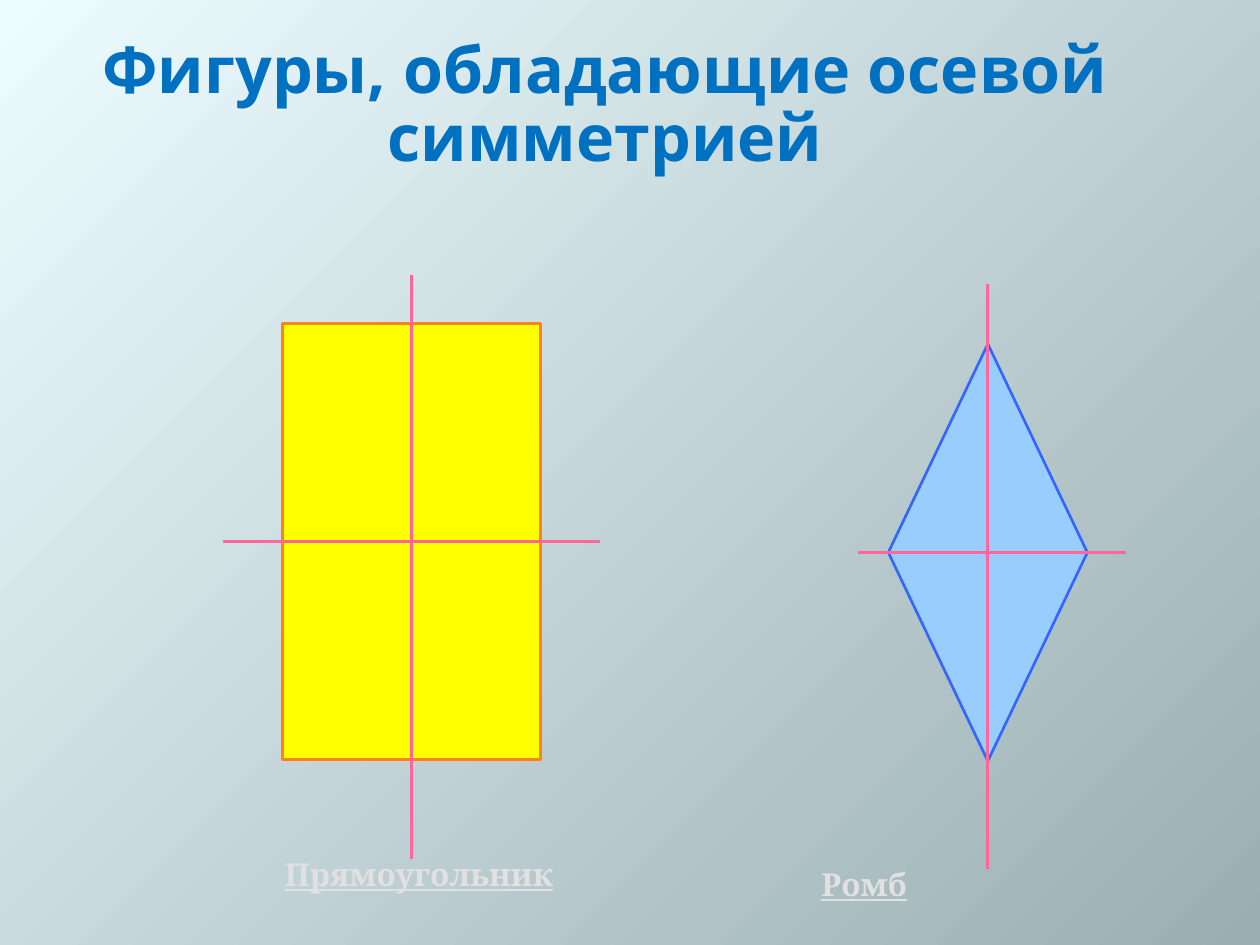
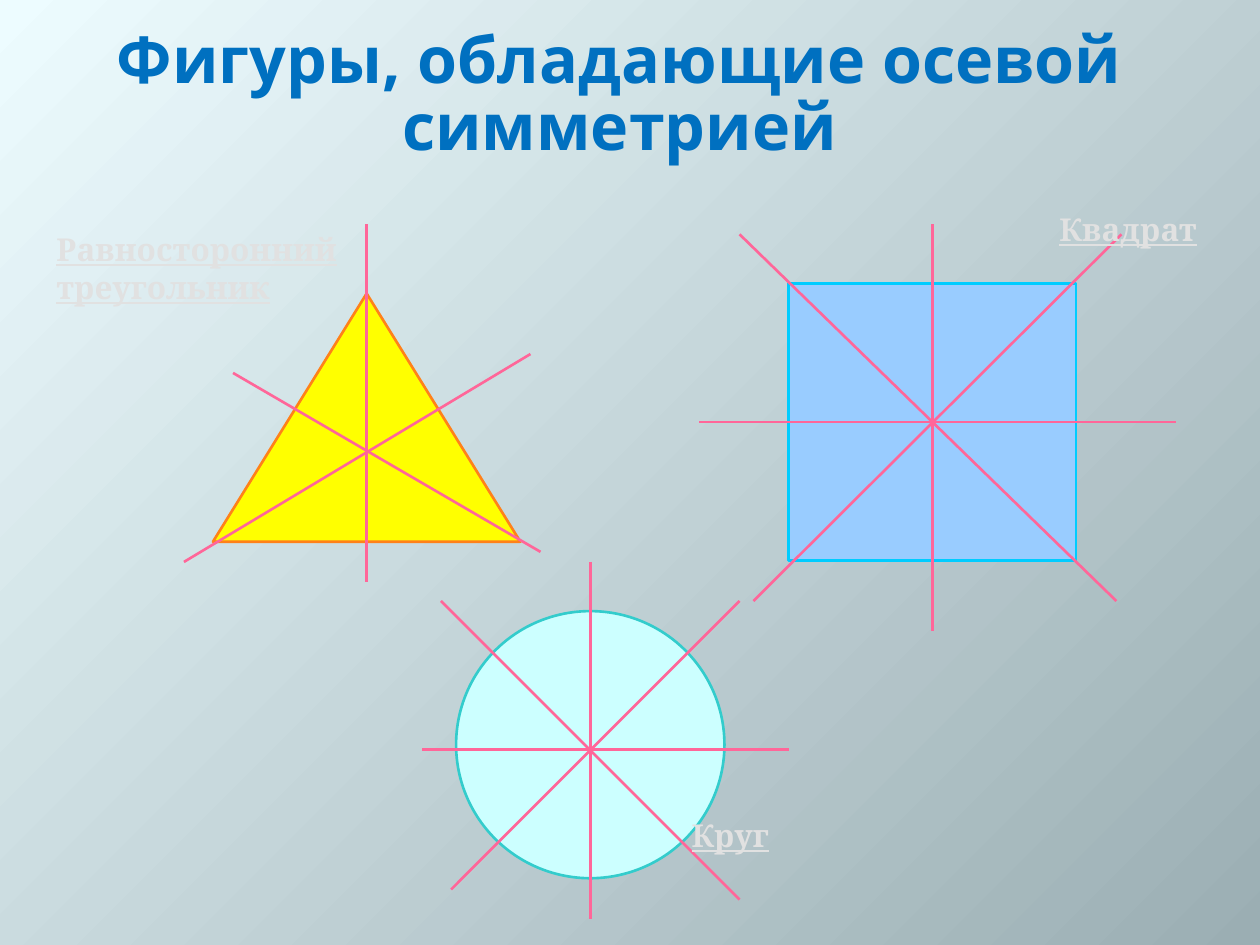
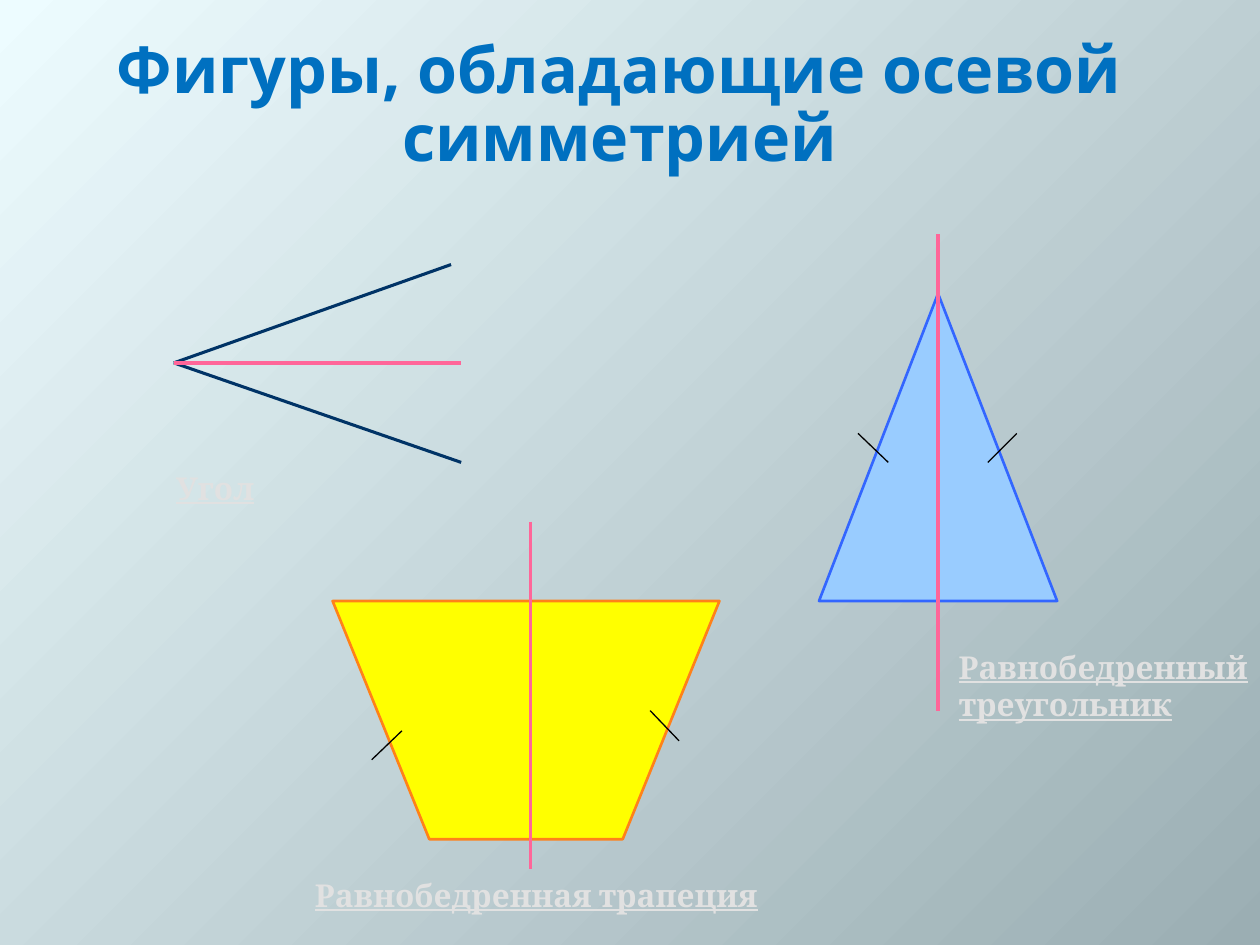
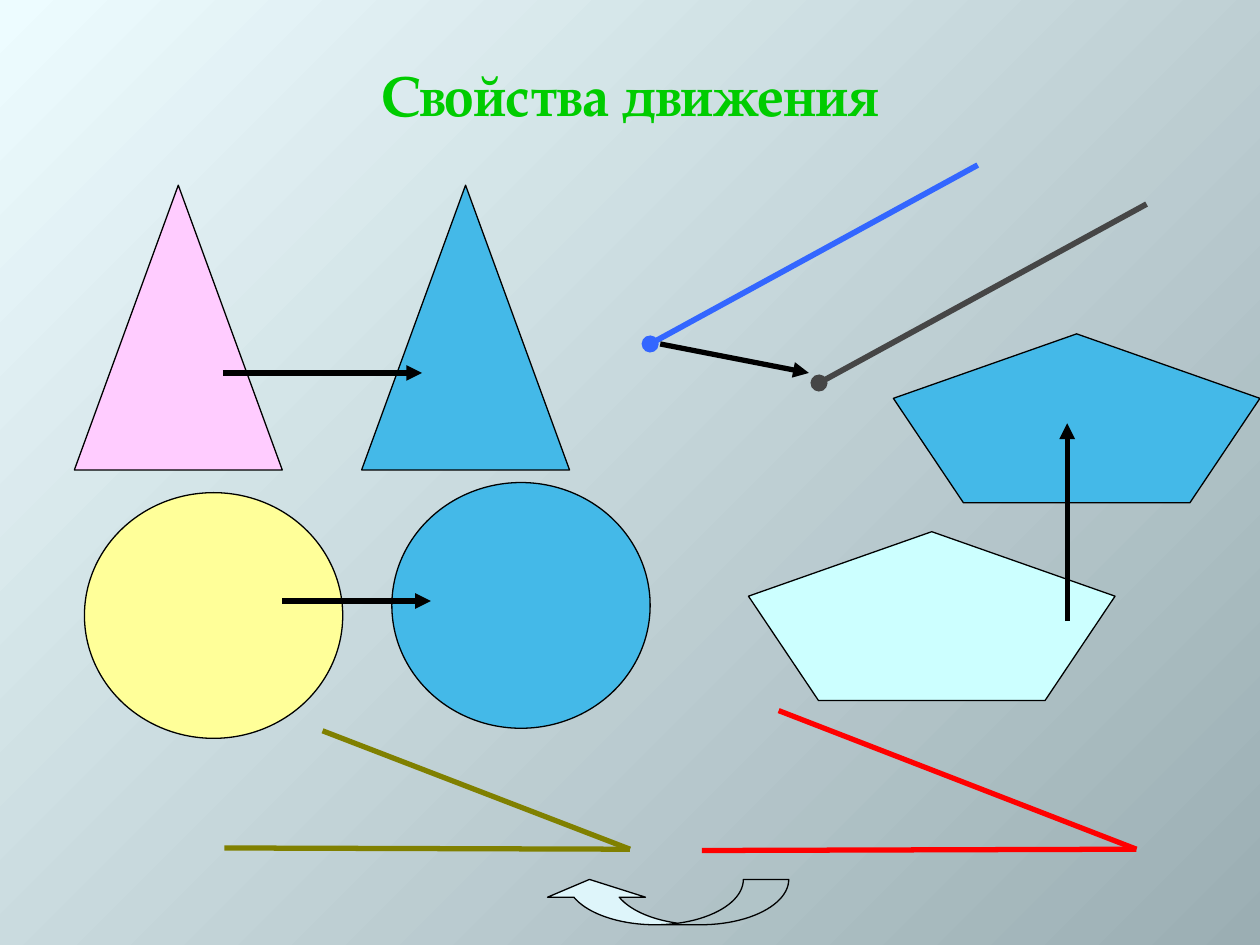
from lxml import etree
from pptx import Presentation
from pptx import util as u
from pptx.dml.color import RGBColor
from pptx.enum import shapes, text
from pptx.oxml import ns

# Shared colours
SKY_LIGHT = RGBColor(0xED, 0xFC, 0xFF)
SKY_DARK = RGBColor(0x9B, 0xAE, 0xB3)
TITLE_BLUE = RGBColor(0x00, 0x70, 0xC0)
TITLE_GREEN = RGBColor(0x00, 0xCC, 0x00)
LABEL_GREY = RGBColor(0xE1, 0xE1, 0xE1)
AXIS_PINK = RGBColor(0xFF, 0x66, 0x99)
BLACK = RGBColor(0x00, 0x00, 0x00)
YELLOW = RGBColor(0xFF, 0xFF, 0x00)
ORANGE = RGBColor(0xFF, 0x81, 0x19)
PALE_BLUE = RGBColor(0x99, 0xCC, 0xFF)
BLUE = RGBColor(0x33, 0x66, 0xFF)
CYAN = RGBColor(0x00, 0xCC, 0xFF)
PALE_CYAN = RGBColor(0xCC, 0xFF, 0xFF)
TEAL = RGBColor(0x33, 0xCC, 0xCC)
NAVY = RGBColor(0x00, 0x33, 0x66)
PINK = RGBColor(0xFF, 0xCC, 0xFF)
PALE_YELLOW = RGBColor(0xFF, 0xFF, 0x99)
IMAGE_BLUE = RGBColor(0x44, 0xB9, 0xE8)
DARK_GREY = RGBColor(0x46, 0x46, 0x46)
RED = RGBColor(0xFF, 0x00, 0x00)
OLIVE = RGBColor(0x80, 0x80, 0x00)
ARROW_FILL = RGBColor(0xDE, 0xF5, 0xFA)

SYMMETRY_TITLE = "Фигуры, обладающие осевой симметрией"
KIND = shapes.MSO_SHAPE


def inches(values):
    return [u.Inches(value) for value in values]


def moved(point, offset):
    return point[0] + offset[0], point[1] + offset[1]


def set_background(master):
    """Gradient that spreads from the top left corner."""
    fill = master.background.fill
    fill.gradient()
    for stop, color, position in zip(fill.gradient_stops, (SKY_LIGHT, SKY_DARK), (0, 1)):
        stop.color.rgb = color
        stop.position = position
    gradient = master.element.find(".//" + ns.qn("a:gradFill"))
    linear = gradient.find(ns.qn("a:lin"))
    spread = etree.Element(ns.qn("a:path"), path="circle")
    etree.SubElement(spread, ns.qn("a:fillToRect"), l="0", t="0", r="100000", b="100000")
    gradient.replace(linear, spread)


# Basic parts
def add_text(page, words, box, size=18, font="Cambria", color=LABEL_GREY, underline=False,
             align=text.PP_ALIGN.LEFT, anchor=text.MSO_ANCHOR.TOP, spacing=1.0, right_inset=0.1):
    frame = page.shapes.add_textbox(*inches(box)).text_frame
    frame.word_wrap = True
    frame.vertical_anchor = anchor
    frame.margin_right = u.Inches(right_inset)
    for number, line in enumerate(words.split("\n")):
        para = frame.paragraphs[0] if number == 0 else frame.add_paragraph()
        para.alignment = align
        para.line_spacing = spacing
        span = para.add_run()
        span.text = line
        span.font.size = u.Pt(size)
        span.font.name = font
        span.font.bold = True
        span.font.underline = underline
        span.font.color.rgb = color


def add_title(page, words, box, **style):
    add_text(page, words, box, align=text.PP_ALIGN.CENTER,
             anchor=text.MSO_ANCHOR.MIDDLE, **style)


def add_symmetry_title(page, top=0.31, width=10):
    add_title(page, SYMMETRY_TITLE, (0, top, width, 1.08), size=36.9, font="Open Sans",
              color=TITLE_BLUE, spacing=0.87, right_inset=0.26)


def add_label(page, words, left, top, width, height=0.4):
    add_text(page, words, (left, top, width, height), underline=True)


def add_line(page, start, end, color=AXIS_PINK, width=1.5, head=None, tail=None):
    line = page.shapes.add_connector(shapes.MSO_CONNECTOR.STRAIGHT, *inches((*start, *end)))
    line.line.color.rgb = color
    line.line.width = u.Pt(width)
    outline = line.line._get_or_add_ln()
    for tag, style in (("a:headEnd", head), ("a:tailEnd", tail)):
        if style:
            etree.SubElement(outline, ns.qn(tag), type=style)
    etree.SubElement(line._element.spPr, ns.qn("a:effectLst"))


def paint(shape, fill, outline, width):
    shape.shadow.inherit = False
    shape.fill.solid()
    shape.fill.fore_color.rgb = fill
    shape.line.color.rgb = outline
    shape.line.width = u.Pt(width)


def add_figure(page, kind, box, fill, outline=BLACK, width=1.5):
    shape = page.shapes.add_shape(kind, *inches(box))
    paint(shape, fill, outline, width)
    return shape


# Axes placed relative to a figure's box
def add_vertical_axis(page, box, above, below, width=1.5):
    left, top, across, down = box
    middle = left + across / 2
    add_line(page, (middle, top - above), (middle, top + down + below), width=width)


def add_horizontal_axis(page, box, before, after):
    left, top, across, down = box
    middle = top + down / 2
    add_line(page, (left - before, middle), (left + across + after, middle))


def add_lines_from(page, box, offsets, **style):
    """Each line runs between two offsets from the box's top left corner."""
    for start, end in offsets:
        add_line(page, moved(box, start), moved(box, end), **style)


# Figures with their axes
def draw_equilateral_triangle(page, box):
    add_figure(page, KIND.ISOSCELES_TRIANGLE, box, YELLOW, ORANGE)
    add_vertical_axis(page, box, 0.55, 0.32)
    add_lines_from(page, box, [((-0.23, 2.13), (2.52, 0.48)), ((2.6, 2.05), (0.16, 0.63))])


def draw_square(page, box):
    add_figure(page, KIND.RECTANGLE, box, PALE_BLUE, CYAN)
    add_horizontal_axis(page, box, 0.71, 0.79)
    add_vertical_axis(page, box, 0.47, 0.56)
    add_lines_from(page, box, [((-0.39, -0.39), (2.6, 2.52)), ((2.64, -0.39), (-0.28, 2.52))])


def draw_circle(page, box):
    add_figure(page, KIND.OVAL, box, PALE_CYAN, TEAL)
    add_vertical_axis(page, box, 0.39, 0.32)
    add_lines_from(page, box, [((-0.27, 1.1), (2.64, 1.1)), ((-0.04, 2.21), (2.25, -0.08)),
                               ((-0.12, -0.08), (2.25, 2.29))])


def draw_angle(page, vertex, arms, color, width):
    for arm in arms:
        add_line(page, vertex, moved(vertex, arm), color, width)


def draw_isosceles_triangle(page, box):
    add_figure(page, KIND.ISOSCELES_TRIANGLE, box, PALE_BLUE, BLUE)
    add_vertical_axis(page, box, 0.47, 0.87, width=2)
    add_lines_from(page, box, [((0.31, 1.11), (0.55, 1.34)), ((1.57, 1.11), (1.34, 1.34))],
                   color=BLACK, width=0.75)


def draw_trapezoid(page, box):
    left, top, across, down = box
    inset = across / 4
    corners = [(left + inset, top + down), (left + across - inset, top + down),
               (left + across, top)]
    builder = page.shapes.build_freeform(u.Inches(left), u.Inches(top))
    builder.add_line_segments([inches(corner) for corner in corners], close=True)
    paint(builder.convert_to_shape(), YELLOW, ORANGE, 1.5)
    add_lines_from(page, box, [((1.57, -0.63), (1.57, 2.13))], width=2)
    add_lines_from(page, box, [((2.52, 0.87), (2.75, 1.11)), ((0.55, 1.03), (0.31, 1.26))],
                   color=BLACK, width=0.75)


# Movements
def add_arrow(page, start, end):
    add_line(page, start, end, BLACK, 3, tail="triangle")


def draw_moved_figure(page, kind, box, shift, fill, arrow):
    """A figure, its blue image and the arrow of the movement."""
    add_figure(page, kind, box, fill, width=0.75)
    add_figure(page, kind, (*moved(box, shift), *box[2:]), IMAGE_BLUE, width=0.75)
    add_arrow(page, *[moved(box, offset) for offset in arrow])


def draw_moved_ray(page, origin, direction, shift):
    for start, color in ((origin, BLUE), (moved(origin, shift), DARK_GREY)):
        add_line(page, start, moved(start, direction), color, 3.25, head="oval")
    add_arrow(page, moved(origin, (0.08, 0)), moved(origin, (1.26, 0.23)))


def draw_turn_arrow(page, box):
    arrow = add_figure(page, KIND.CURVED_UP_ARROW, box, ARROW_FILL, width=0.75)
    for number, value in enumerate((1.08, 2.16, 0.392)):
        arrow.adjustments[number] = value
    arrow._element.spPr.find(ns.qn("a:xfrm")).set("flipH", "1")


# Slides
def build_quadrilaterals(page):
    add_symmetry_title(page, width=9.77)
    rhombus = (7.05, 2.73, 1.58, 3.31)
    rectangle = (2.24, 2.57, 2.05, 3.46)
    add_figure(page, KIND.DIAMOND, rhombus, PALE_BLUE, BLUE)
    add_vertical_axis(page, rhombus, 0.48, 0.86)
    add_horizontal_axis(page, rhombus, 0.24, 0.31)
    add_figure(page, KIND.RECTANGLE, rectangle, YELLOW, ORANGE)
    add_vertical_axis(page, rectangle, 0.39, 0.79)
    add_horizontal_axis(page, rectangle, 0.47, 0.47)
    add_label(page, "Прямоугольник", 2.16, 6.74, 2.68)
    add_label(page, "Ромб", 6.42, 6.82, 2.76)


def build_regular_figures(page):
    add_symmetry_title(page, top=0.23)
    draw_equilateral_triangle(page, (1.69, 2.33, 2.44, 1.97))
    draw_square(page, (6.26, 2.25, 2.28, 2.2))
    draw_circle(page, (3.62, 4.85, 2.13, 2.12))
    add_label(page, "Равносторонний треугольник", 0.35, 1.78, 2.6, 0.71)
    add_label(page, "Квадрат", 8.31, 1.62, 1.69)
    add_label(page, "Круг", 5.39, 6.43, 2.13)


def build_single_axis_figures(page):
    add_symmetry_title(page)
    vertex = (1.38, 2.88)
    draw_angle(page, vertex, [(2.2, -0.78), (2.28, 0.79)], NAVY, 1.75)
    add_line(page, vertex, moved(vertex, (2.28, 0)), width=2)
    draw_isosceles_triangle(page, (6.5, 2.33, 1.89, 2.44))
    draw_trapezoid(page, (2.64, 4.77, 3.07, 1.89))
    add_label(page, "Угол", 1.3, 3.67, 1.5)
    add_label(page, "Равнобедренный\nтреугольник", 7.51, 5.09, 2.63, 0.71)
    add_label(page, "Равнобедренная трапеция", 2.4, 6.9, 4.49)


def build_movements(page):
    add_title(page, "Свойства движения", (0.5, 0.16, 9, 1.17), size=32,
              font="TeX Gyre Pagella", color=TITLE_GREEN)
    draw_moved_figure(page, KIND.ISOSCELES_TRIANGLE, (0.59, 1.47, 1.65, 2.26), (2.28, 0),
                      PINK, [(1.18, 1.49), (2.76, 1.49)])
    draw_moved_ray(page, (5.16, 2.73), (2.6, -1.42), (1.34, 0.31))
    draw_moved_figure(page, KIND.OVAL, (0.67, 3.91, 2.05, 1.95), (2.44, -0.08),
                      PALE_YELLOW, [(1.57, 0.86), (2.75, 0.86)])
    draw_moved_figure(page, KIND.REGULAR_PENTAGON, (5.94, 4.22, 2.91, 1.34), (1.15, -1.57),
                      PALE_CYAN, [(2.53, 0.71), (2.53, -0.86)])
    draw_angle(page, (9.02, 6.74), [(-2.84, -1.1), (-3.45, 0.01)], RED, 3)
    draw_angle(page, (5, 6.74), [(-2.44, -0.94), (-3.22, -0.01)], OLIVE, 3)
    draw_turn_arrow(page, (4.29, 6.98, 1.97, 0.36))


def main():
    deck = Presentation()
    deck.slide_width, deck.slide_height = inches((10, 7.5))
    set_background(deck.slide_master)
    for build in (build_quadrilaterals, build_regular_figures,
                  build_single_axis_figures, build_movements):
        build(deck.slides.add_slide(deck.slide_layouts[6]))
    deck.save("out.pptx")


if __name__ == "__main__":
    main()
